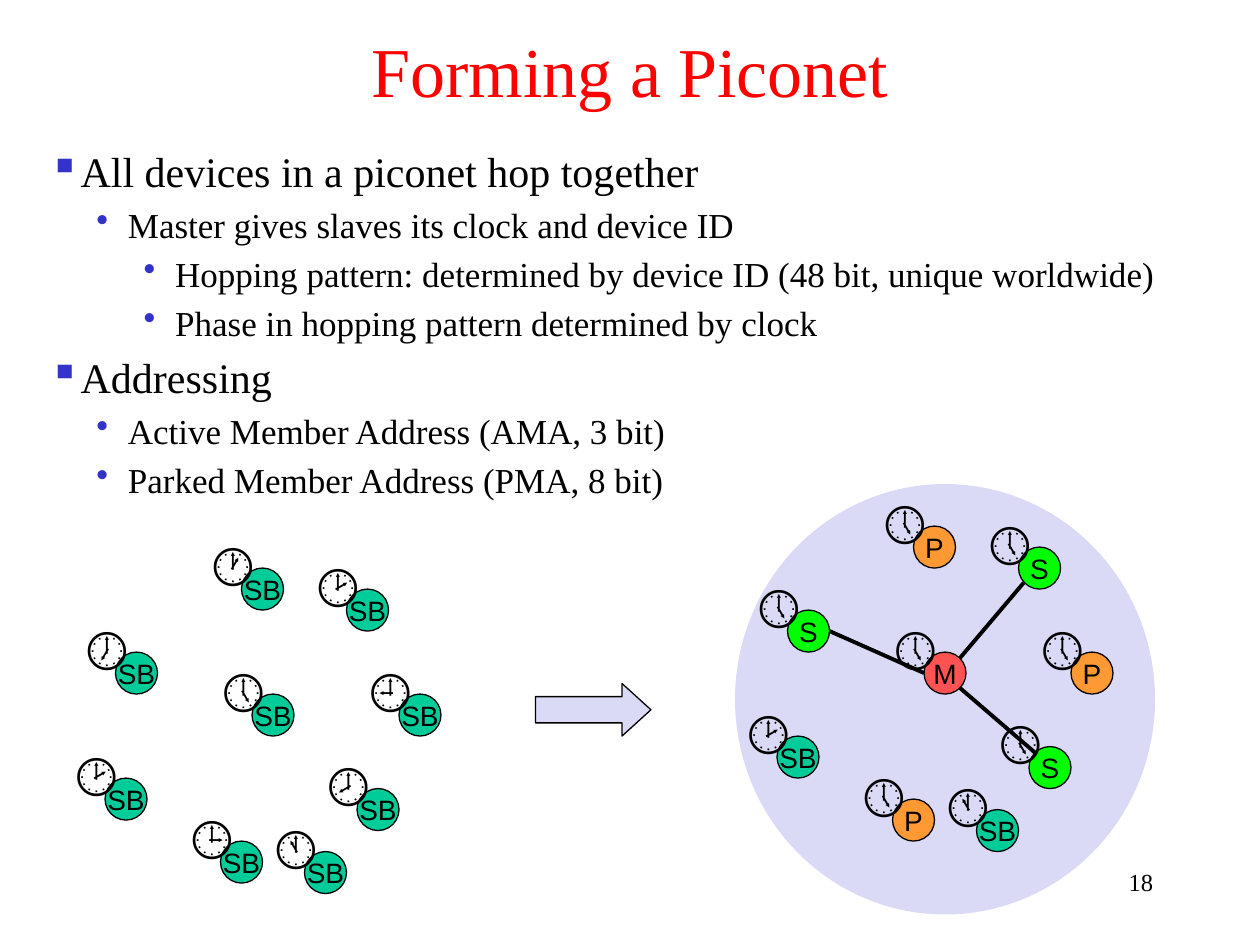
from lxml.etree import SubElement as Sub
from pptx import Presentation
from pptx.dml.color import RGBColor as RGB
from pptx.enum.shapes import MSO_CONNECTOR as LINK, MSO_SHAPE as KIND
from pptx.enum.text import MSO_ANCHOR as ANC, MSO_AUTO_SIZE as AUTO, PP_ALIGN as ALIGN
from pptx.oxml.ns import qn
from pptx.util import Inches, Pt

BLACK = RGB(0x00, 0x00, 0x00)
RED = RGB(0xFF, 0x00, 0x00)
BLUE = RGB(0x33, 0x33, 0xCC)
PALE = RGB(0xDA, 0xDA, 0xF6)
TEAL = RGB(0x00, 0xCC, 0x99)
LIME = RGB(0x00, 0xFF, 0x00)
ROSE = RGB(0xFF, 0x53, 0x53)
GOLD = RGB(0xFF, 0x99, 0x33)
SERIF, SANS = "Times New Roman", "Arial"
CELL = Inches(1) / 12
DROP = 0.1
DISC = 4

deck = Presentation()
deck.slide_width, deck.slide_height = Inches(10), Inches(7.5)
slide = deck.slides.add_slide(deck.slide_layouts[6])
shapes = slide.shapes


def grid(x, y, *size):
    return [int(n * CELL) for n in (x, y + DROP, *size)]


def write(para, text, size, font, color=BLACK):
    run = para.add_run()
    run.text = text
    run.font.size = Pt(size)
    run.font.name = font
    run.font.color.rgb = color


page = shapes.add_textbox(*grid(86, 81.9, 25, 6)).text_frame
page.word_wrap = True
page.paragraphs[0].alignment = ALIGN.RIGHT
write(page.paragraphs[0], "18", 14, SERIF)

title = shapes.add_textbox(*grid(0, 2.4, 120, 8.2)).text_frame
title.word_wrap = True
title.vertical_anchor = ANC.MIDDLE
title.paragraphs[0].alignment = ALIGN.CENTER
write(title.paragraphs[0], "Forming a Piconet", 40, SERIF, RED)

body = shapes.add_textbox(*grid(3.5, 13.2, 113.8, 73.4)).text_frame
body.word_wrap = True
items = [
    (0, "All devices in a piconet hop together"),
    (1, "Master gives slaves its clock and device ID"),
    (2, "Hopping pattern: determined by device ID (48 bit, unique worldwide)"),
    (2, "Phase in hopping pattern determined by clock"),
    (0, "Addressing"),
    (1, "Active Member Address (AMA, 3 bit)"),
    (1, "Parked Member Address (PMA, 8 bit)"),
]
for i, (level, text) in enumerate(items):
    para = body.add_paragraph() if i else body.paragraphs[0]
    para.level = level
    write(para, text, 20 if level else 24, SERIF)
    props = para._p.get_or_add_pPr()
    props.set("marL", str(int(CELL * (3 + 4.5 * level))))
    props.set("indent", str(int(CELL * -3)))
    Sub(Sub(props, qn("a:spcBef")), qn("a:spcPct")).set("val", "20000")
    Sub(Sub(props, qn("a:buClr")), qn("a:srgbClr")).set("val", str(BLUE))
    Sub(props, qn("a:buChar")).set("char", "•" if level else "▪")

free = [
    ("SB", 24, 66, "🕔"), ("SB", 11, 62, "🕖"), ("SB", 21, 80, "🕒"),
    ("SB", 10, 74, "🕑"), ("SB", 33, 56, "🕑"), ("SB", 34, 75, "🕗"),
    ("SB", 23, 54, "🕐"), ("SB", 38, 66, "🕘"), ("SB", 29, 81, "🕚"),
]
joined = [
    ("M", 88, 62, "🕔"), ("S", 75, 58, "🕔"), ("P", 85, 76, "🕔"),
    ("SB", 74, 70, "🕑"), ("S", 97, 52, "🕔"), ("S", 98, 71, "🕔"),
    ("P", 87, 50, "🕔"), ("P", 102, 62, "🕔"), ("SB", 93, 77, "🕚"),
]
fills = {"SB": TEAL, "M": ROSE, "S": LIME, "P": GOLD}

net = shapes.add_shape(KIND.OVAL, *grid(70, 46, 40, 41))
net.shadow.inherit = False
net.fill.solid()
net.fill.fore_color.rgb = PALE
net.line.fill.background()

for role, x, y, clock in free + joined:
    disc = shapes.add_shape(KIND.OVAL, *grid(x, y, DISC, DISC))
    disc.shadow.inherit = False
    disc.fill.solid()
    disc.fill.fore_color.rgb = fills[role]
    disc.line.color.rgb = BLACK
    disc.line.width = Pt(0.75)
    frame = disc.text_frame
    frame.word_wrap = False
    frame.vertical_anchor = ANC.MIDDLE
    frame.paragraphs[0].alignment = ALIGN.CENTER
    write(frame.paragraphs[0], role, 16, SANS)

links = [
    (88, 64, 79, 60),
    (91.4, 62.6, 97.5, 55.4),
    (98.6, 71.6, 91.4, 65.4),
]
for x, y, to_x, to_y in links:
    link = shapes.add_connector(LINK.STRAIGHT, *grid(x, y), *grid(to_x, to_y))
    link.line.color.rgb = BLACK
    link.line.width = Pt(2.25)
    Sub(link._element.spPr, qn("a:effectLst"))

arrow = shapes.add_shape(KIND.RIGHT_ARROW, *grid(51, 65, 11, 5))
arrow.adjustments[0], arrow.adjustments[1] = 0.5, 0.55
arrow.shadow.inherit = False
arrow.fill.solid()
arrow.fill.fore_color.rgb = PALE
arrow.line.color.rgb = BLACK
arrow.line.width = Pt(0.75)

for role, x, y, clock in free + joined:
    frame = shapes.add_textbox(*grid(x - DISC, y - DISC, 6.6, 6.8)).text_frame
    frame.word_wrap = False
    frame.auto_size = AUTO.SHAPE_TO_FIT_TEXT
    write(frame.paragraphs[0], clock, 28, SANS)

deck.save("out.pptx")
